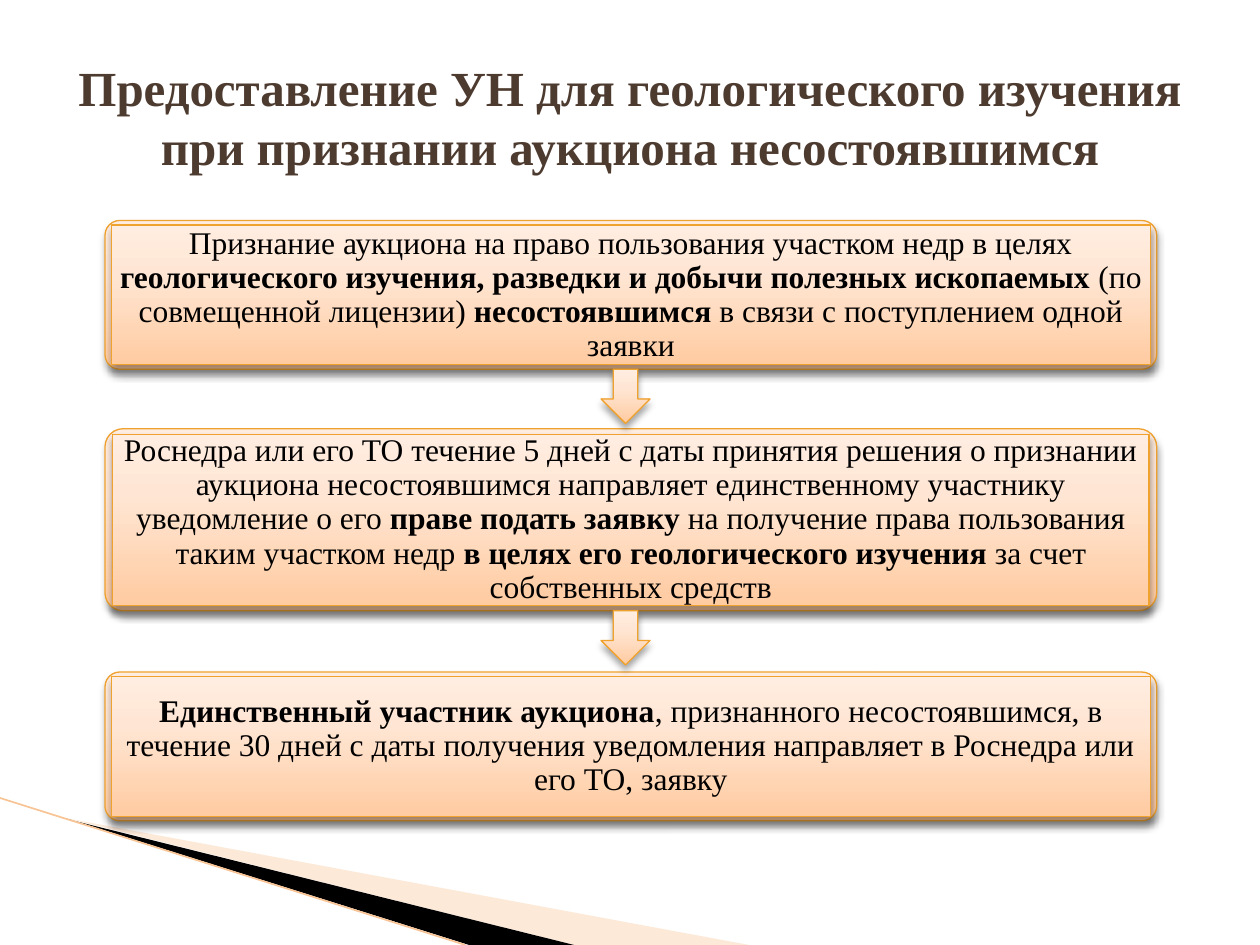
"""Build a slide with a three-step flow about awarding subsoil plots."""
from pptx import Presentation
from pptx.dml.color import RGBColor
from pptx.enum.shapes import MSO_CONNECTOR, MSO_SHAPE
from pptx.enum.text import MSO_ANCHOR, MSO_AUTO_SIZE, PP_ALIGN
from pptx.oxml import parse_xml
from pptx.oxml.ns import nsdecls, qn
from pptx.util import Pt

ROUNDED, RECT, ARROW = MSO_SHAPE.ROUNDED_RECTANGLE, MSO_SHAPE.RECTANGLE, MSO_SHAPE.DOWN_ARROW
STRAIGHT, MIDDLE, CENTER = MSO_CONNECTOR.STRAIGHT, MSO_ANCHOR.MIDDLE, PP_ALIGN.CENTER
NO_FIT = MSO_AUTO_SIZE.NONE

COLORS = {"title": "4E3B30", "text": "000000", "border": "F0A22E", "shadow": "000000",
          "wedge": "FBC99E", "stripe": "000000", "edge": "F9C495"}
GRADIENT = [(0, "FFCBA1"), (65, "FFE6D4"), (100, "FFEDE1")]
BOX_LEFT, BOX_WIDTH = 60, 601
ARROW_LEFT, ARROW_WIDTH, ARROW_HEIGHT = 343.5, 28, 31

STEPS = [
    (126, 85, [
        ("Признание аукциона на право пользования участком недр в целях ", False),
        ("геологического изучения, разведки и добычи полезных ископаемых ", True),
        ("(по совмещенной лицензии) ", False),
        ("несостоявшимся", True),
        (" в связи с поступлением одной заявки", False)]),
    (245, 104, [
        ("Роснедра или его ТО течение 5 дней с даты принятия решения о признании аукциона "
         "несостоявшимся направляет единственному участнику уведомление о его ", False),
        ("праве подать заявку ", True),
        ("на получение права пользования таким участком недр ", False),
        ("в целях его геологического изучения ", True),
        ("за счет собственных средств", False)]),
    (384, 85, [
        ("Единственный участник аукциона", True),
        (", признанного несостоявшимся, в течение 30 дней с даты получения уведомления "
         "направляет в Роснедра или его ТО, заявку", False)]),
]


def rgb(name):
    """Return the named colour."""
    return RGBColor.from_string(COLORS[name])


def write(shape, runs, size=18, color="text", font="Times New Roman", spacing=None, inset=None):
    """Write one centred paragraph of (text, bold) runs into a shape."""
    tf = shape.text_frame
    tf.word_wrap = True
    tf.auto_size = NO_FIT
    tf.vertical_anchor = MIDDLE
    if inset is not None:
        tf.margin_left = tf.margin_right = tf.margin_top = tf.margin_bottom = Pt(inset)
    p = tf.paragraphs[0]
    p.alignment = CENTER
    p.line_spacing = spacing
    for text, bold in runs:
        r = p.add_run()
        r.text = text
        r.font.name, r.font.size, r.font.bold = font, Pt(size), bold
        r.font.color.rgb = rgb(color)


class FlowSlide:
    """Hold the current slide and the style of its elements."""

    def __init__(self, prs):
        """Add a title-only slide."""
        self.s = prs.slides.add_slide(prs.slide_layouts[5])
        self.border_width = Pt(0.75)

    def title(self, text, left, top, width, height):
        """Place and fill the title."""
        title = self.s.shapes.title
        title.left, title.top, title.width, title.height = map(Pt, (left, top, width, height))
        write(title, [(text, True)], size=28, color="title")

    def panel(self, shapes, kind, left, top, width, height):
        """Add a preset shape with gradient, border and shadow."""
        sp = shapes.add_shape(kind, *map(Pt, (left, top, width, height)))
        sp.fill.gradient()
        stops = "".join(f'<a:gs pos="{pos * 1000}"><a:srgbClr val="{color}"/></a:gs>'
                        for pos, color in GRADIENT)
        props = sp.element.spPr
        props.replace(props.find(qn("a:gradFill")), parse_xml(
            f'<a:gradFill {nsdecls("a")} rotWithShape="1"><a:gsLst>{stops}</a:gsLst>'
            '<a:lin ang="16200000" scaled="0"/></a:gradFill>'))
        sp.line.color.rgb = rgb("border")
        sp.line.width = self.border_width
        sp.shadow.inherit = False
        props.find(qn("a:effectLst")).append(parse_xml(
            f'<a:outerShdw {nsdecls("a")} blurRad="{Pt(4)}" dist="{Pt(3)}" dir="5400000" '
            f'rotWithShape="0"><a:srgbClr val="{COLORS["shadow"]}">'
            '<a:alpha val="35000"/></a:srgbClr></a:outerShdw>'))
        return sp

    def step(self, top, height, runs):
        """Add a rounded box with its inner text box as one group."""
        shapes = self.s.shapes.add_group_shape().shapes
        outer = self.panel(shapes, ROUNDED, BOX_LEFT, top, BOX_WIDTH, height)
        outer.adjustments[0] = 0.1
        dx, dy = 0.042 * height, 0.03 * height
        inner = self.panel(shapes, RECT, BOX_LEFT + dx, top + dy,
                           BOX_WIDTH - 2 * dx, height - 2 * dy)
        write(inner, runs, spacing=0.9, inset=4.5)

    def arrow(self, top):
        """Add a block arrow pointing down."""
        self.panel(self.s.shapes, ARROW, ARROW_LEFT, top, ARROW_WIDTH, ARROW_HEIGHT)

    def wedge(self, points, color, opacity=100):
        """Add a filled polygon without outline."""
        builder = self.s.shapes.build_freeform(*points[0], scale=Pt(1))
        builder.add_line_segments(points[1:], close=True)
        sp = builder.convert_to_shape()
        sp.fill.solid()
        sp.fill.fore_color.rgb = rgb(color)
        sp.line.fill.background()
        sp.shadow.inherit = False
        if opacity < 100:
            sp.element.spPr.find(f'{qn("a:solidFill")}/{qn("a:srgbClr")}').append(
                parse_xml(f'<a:alpha {nsdecls("a")} val="{opacity * 1000}"/>'))

    def line(self, x1, y1, x2, y2, color, width):
        """Add a straight line."""
        line = self.s.shapes.add_connector(STRAIGHT, *map(Pt, (x1, y1, x2, y2)))
        line.line.color.rgb = rgb(color)
        line.line.width = Pt(width)
        line.element.spPr.append(parse_xml(f'<a:effectLst {nsdecls("a")}/>'))


def main():
    """Build and save the presentation."""
    prs = Presentation()
    prs.slide_width, prs.slide_height = Pt(720), Pt(540)
    slide = FlowSlide(prs)
    slide.wedge([(39.5, 468.5), (428, 540), (328, 540), (39.5, 468)], "wedge", opacity=40)
    slide.wedge([(38, 467.5), (328, 540), (268, 540), (39, 468)], "stripe")
    slide.line(0, 456, 266, 540, "edge", 0.95)
    slide.title("Предоставление УН для геологического изучения при признании аукциона "
                "несостоявшимся", 36, 21.6, 648, 90)
    for top, height, runs in STEPS:
        slide.step(top, height, runs)
    for top, height, _ in STEPS[:-1]:
        slide.arrow(top + height)
    prs.save("out.pptx")


if __name__ == "__main__":
    main()
